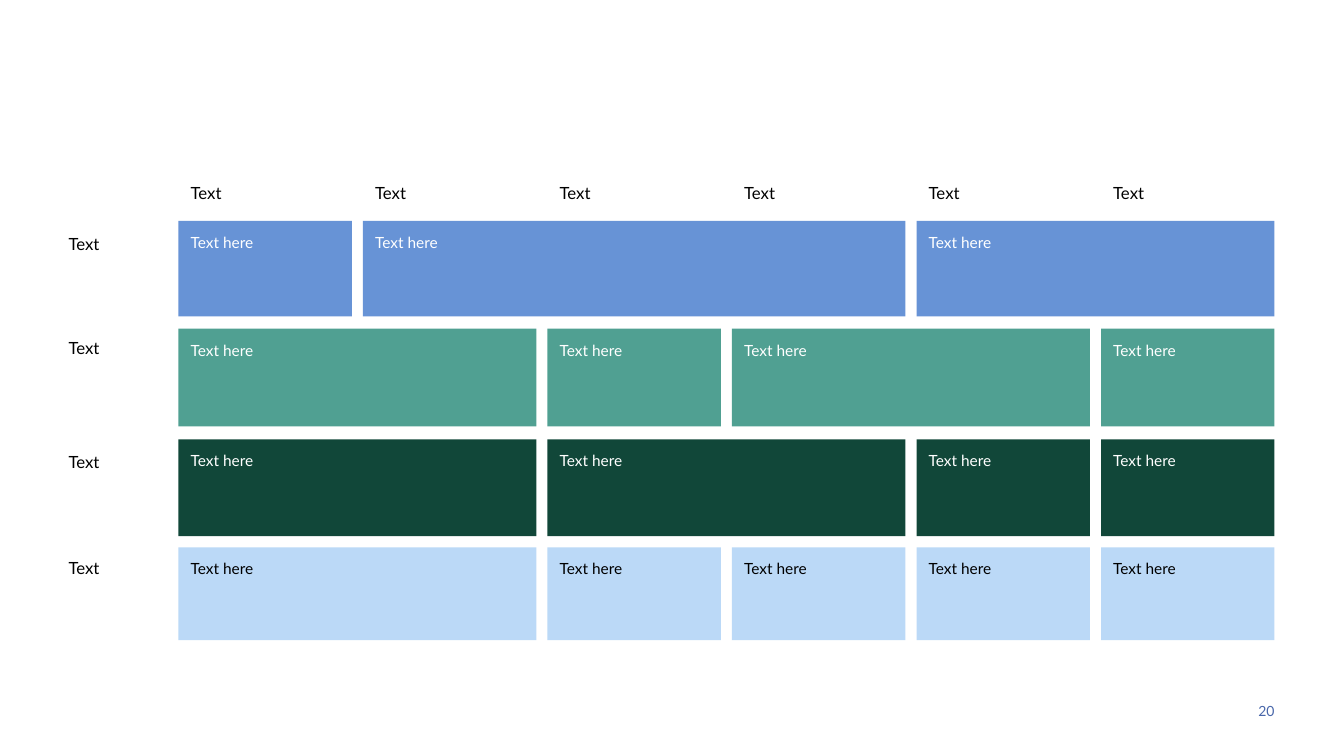
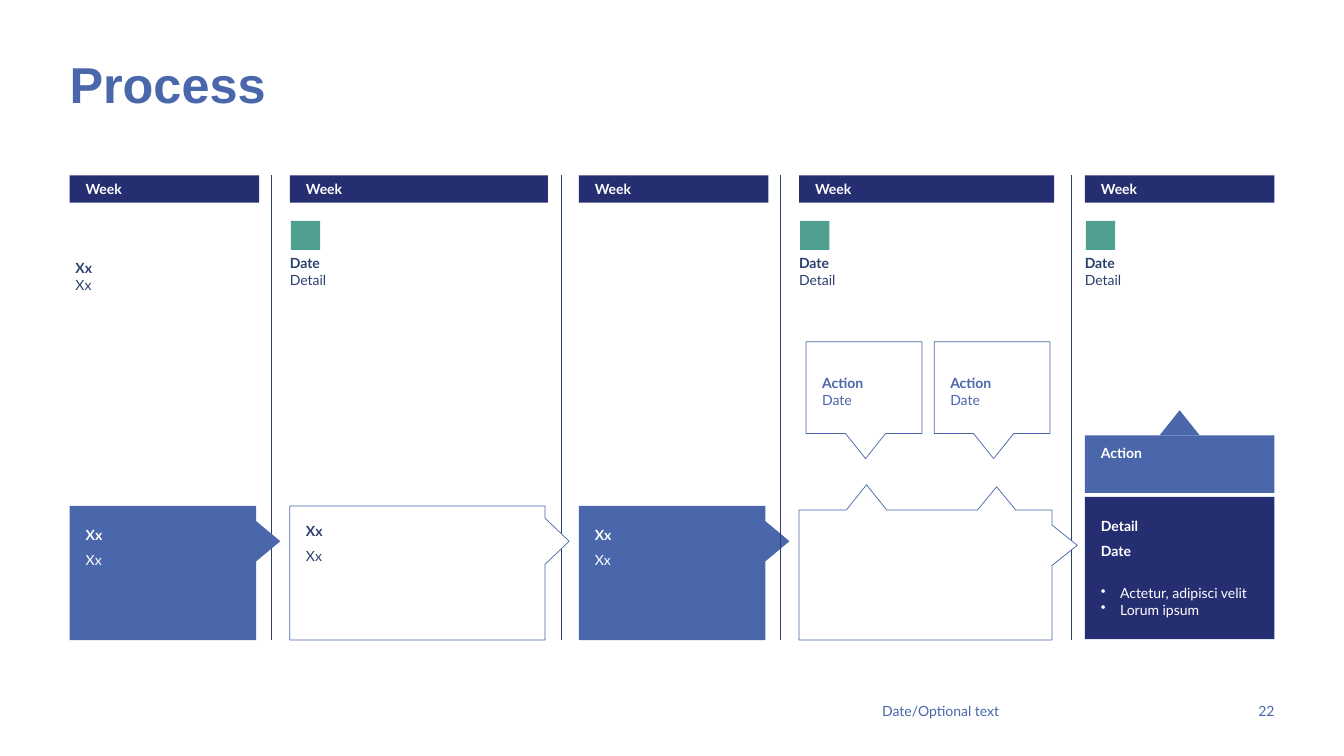
import dataclasses

import pptx
import pptx.dml.color
import pptx.enum.shapes
import pptx.enum.text
import pptx.oxml
import pptx.oxml.ns
import pptx.util

COLORS = {
    "white": "FFFFFF", "black": "000000", "blue": "4967AA", "navy": "242E70",
    "slate": "2B406D", "sky": "6793D6", "teal": "50A092", "forest": "114739",
    "ice": "BBD9F7",
}
SLIDE_WIDTH, SLIDE_HEIGHT = 13.33, 7.5
MODULE = SLIDE_HEIGHT / 75  # all lengths are columns and rows of this grid
SHAPES = pptx.enum.shapes.MSO_SHAPE
ALIGN = pptx.enum.text.PP_ALIGN
ANCHOR = pptx.enum.text.MSO_ANCHOR


def units(modules):
    return pptx.util.Inches(modules * MODULE)


def rgb(name):
    return pptx.dml.color.RGBColor.from_string(COLORS[name])


@dataclasses.dataclass
class Box:
    left: float
    top: float
    width: float
    height: float

    def inner(self, left, top, width, height):
        """Box placed by its offset from this box."""
        return Box(self.left + left, self.top + top, width, height)

    def emu(self):
        return [units(n) for n in (self.left, self.top, self.width, self.height)]


# Text and shapes
def write(shape, *paragraphs, inset=(0, 0, 0, 0), anchor=ANCHOR.TOP, **shared):
    """Each paragraph is a string or a pair of a string and its own format."""
    frame = shape.text_frame
    frame.word_wrap = True
    frame.vertical_anchor = anchor
    (frame.margin_left, frame.margin_top,
     frame.margin_right, frame.margin_bottom) = [units(n) for n in inset]
    for index, item in enumerate(paragraphs):
        text, own = (item, {}) if isinstance(item, str) else item
        style = {"size": 10, "color": "black", "font": "Lato", "bold": False,
                 "align": ALIGN.LEFT, "before": 0, "spacing": None,
                 "bullet": False, **shared, **own}
        paragraph = frame.add_paragraph() if index else frame.paragraphs[0]
        if style["bullet"]:
            add_bullet(paragraph)
        paragraph.alignment = style["align"]
        if index:
            paragraph.space_before = pptx.util.Pt(style["before"])
        if style["spacing"]:
            paragraph.line_spacing = style["spacing"]
        run = paragraph.add_run()
        run.text = text
        run.font.size = pptx.util.Pt(style["size"])
        run.font.name = style["font"]
        run.font.bold = style["bold"]
        run.font.color.rgb = rgb(style["color"])


def add_bullet(paragraph):
    properties = paragraph._p.get_or_add_pPr()
    properties.set("marL", str(units(1.9)))
    properties.set("indent", str(-units(1.9)))
    bullet = pptx.oxml.parse_xml(
        f'<a:buChar {pptx.oxml.ns.nsdecls("a")} char="•"/>')
    properties.append(bullet)


def add_label(slide, box, *paragraphs, **style):
    write(slide.shapes.add_textbox(*box.emu()), *paragraphs, **style)


def paint(shape, fill, line=None):
    shape.shadow.inherit = False
    shape.fill.solid()
    shape.fill.fore_color.rgb = rgb(fill)
    if line:
        shape.line.color.rgb = rgb(line)
        shape.line.width = pptx.util.Pt(0.5)
    else:
        shape.line.fill.background()
    return shape


def add_block(slide, box, fill, kind=SHAPES.RECTANGLE):
    return paint(slide.shapes.add_shape(kind, *box.emu()), fill)


def add_pointed_box(slide, box, fill, line=None, top=(), right=(), bottom=()):
    """Rectangle with points on its sides, each (centre, half width, depth)."""
    width, height = box.width, box.height
    corners = [(0, 0)]
    for centre, half, depth in top:
        corners += [(centre - half, 0), (centre, -depth), (centre + half, 0)]
    corners.append((width, 0))
    for centre, half, depth in right:
        corners += [(width, centre - half), (width + depth, centre),
                    (width, centre + half)]
    corners.append((width, height))
    for centre, half, depth in bottom:
        corners += [(centre + half, height), (centre, height + depth),
                    (centre - half, height)]
    corners.append((0, height))
    points = [(units(box.left + x), units(box.top + y)) for x, y in corners]
    builder = slide.shapes.build_freeform(*points[0], scale=1.0)
    builder.add_line_segments(points[1:], close=True)
    return paint(builder.convert_to_shape(), fill, line)


def add_rule(slide, x, top, bottom):
    rule = slide.shapes.add_connector(
        pptx.enum.shapes.MSO_CONNECTOR.STRAIGHT,
        units(x), units(top), units(x), units(bottom))
    rule.line.color.rgb = rgb("slate")
    rule.line.width = pptx.util.Pt(0.5)
    rule._element.spPr.append(pptx.oxml.parse_xml(
        f'<a:effectLst {pptx.oxml.ns.nsdecls("a")}/>'))


# Shared slide elements
def add_slide(presentation, number, title=None, footer=None):
    slide = presentation.slides.add_slide(presentation.slide_layouts[6])
    if title:
        add_label(slide, Box(6.9, 6.2, 119.6, 5.3), title, size=36,
                  font="Arial", bold=True, color="blue", spacing=0.85)
    small = {"color": "blue", "anchor": ANCHOR.BOTTOM,
             "spacing": pptx.util.Pt(12)}
    if footer:
        add_label(slide, Box(87.5, 68.1, 28.9, 3.3), footer, **small)
    add_label(slide, Box(117.7, 68.1, 8.7, 3.3), number,
              align=ALIGN.RIGHT, **small)
    return slide


# Slide with a matrix of spanning cells
def add_matrix(slide, box, columns, gap, rows):
    cell = (box.width - gap * (columns - 1)) / columns
    pitch = cell + gap
    for column in range(columns):
        add_label(slide, box.inner(column * pitch, -4.3, cell, 4.4), "Text",
                  size=12, inset=(1.2, 0.5, 1, 0.5))
    for top, height, label_offset, fill, color, spans in rows:
        add_label(slide, box.inner(-10.9, top + label_offset, 10, 3.6),
                  "Text", size=12)
        column = 0
        for span in spans:
            block = add_block(slide, box.inner(
                column * pitch, top, span * pitch - gap, height), fill)
            write(block, "Text here", size=11, color=color,
                  inset=(1.2, 1.2, 0.4, 2))
            column += span


def build_matrix_slide(presentation):
    slide = add_slide(presentation, "20")
    rows = [
        (0, 9.5, 1.3, "sky", "white", (1, 3, 2)),
        (10.7, 9.7, 0.9, "teal", "white", (2, 1, 2, 1)),
        (21.7, 9.6, 1.2, "forest", "white", (2, 2, 1, 1)),
        (32.4, 9.2, 1, "ice", "black", (2, 1, 1, 1, 1)),
    ]
    add_matrix(slide, Box(17.7, 21.9, 108.7, 41.6), 6, 1.1, rows)


# Regions of the process slide, each placed in its week column
def week_columns(area, widths):
    gap = (area.width - sum(widths)) / (len(widths) - 1)
    columns, left = [], 0
    for width in widths:
        columns.append(area.inner(left, 0, width, area.height))
        left += width + gap
    return columns, gap


def add_week_header(slide, column):
    header = add_block(slide, column.inner(0, 0, column.width, 2.7), "navy")
    write(header, "Week", color="white", bold=True, inset=(1.6, 0.5, 1, 0.5))


def add_date(slide, column):
    add_block(slide, column.inner(0.1, 4.5, 2.9, 2.9), "teal")
    add_label(slide, column.inner(0, 7.9, 16, 3.4), ("Date", {"bold": True}),
              "Detail", color="slate")


def add_stage(slide, column, fill, color, line=None, inset_top=2):
    arrow = add_pointed_box(
        slide, column.inner(0, 32.8, column.width - 0.3, 13.3), fill, line,
        right=[(3.5, 2.3 if line else 2, 2.4)])
    write(arrow, ("Xx", {"bold": True}), "Xx", color=color, before=6,
          inset=(1.6, inset_top, 1, 0.4))


def add_actions(slide, column):
    for index in range(2):
        callout = add_pointed_box(
            slide, column.inner(0.7 + index * 12.7, 16.5, 11.5, 9.1),
            "white", "blue", bottom=[(5.9, 2, 2.5)])
        write(callout, ("Action", {"bold": True}), "Date", color="blue",
              anchor=ANCHOR.MIDDLE, inset=(1.6, 0.5, 1, 2.2))
    add_pointed_box(
        slide, column.inner(0, 33.2, column.width - 0.2, 12.9), "white", "blue",
        top=[(6.7, 2, 2.5), (19.6, 1.9, 2.3)], right=[(3.5, 2, 2.5)])


def add_outcome(slide, column):
    action = add_block(slide, column.inner(0, 25.8, column.width, 5.7), "blue")
    write(action, "Action", color="white", bold=True, inset=(1.6, 0.9, 1, 1))
    add_block(slide, column.inner(column.width / 2 - 2, 23.3, 4, 2.5), "blue",
              SHAPES.ISOSCELES_TRIANGLE)
    detail = add_block(slide, column.inner(0, 31.9, column.width, 14.1), "navy")
    write(detail, ("Detail", {"bold": True}),
          ("Date", {"bold": True, "before": 6}),
          ("Actetur, adipisci velit", {"bullet": True, "before": 18}),
          ("Lorum ipsum", {"bullet": True}), color="white",
          inset=(1.6, 2, 1, 2))


def build_process_slide(presentation):
    slide = add_slide(presentation, "22", "Process", "Date/Optional text")
    area = Box(6.9, 17.4, 119.5, 46.1)
    columns, gap = week_columns(area, (18.8, 25.6, 18.8, 25.3, 18.8))
    first, second, third, fourth, fifth = columns
    for column in columns:
        add_week_header(slide, column)
    for column in (second, fourth, fifth):
        add_date(slide, column)
    add_label(slide, first.inner(-0.4, 7.9, 18.1, 4.4), ("Xx", {"bold": True}),
              "Xx", color="slate", inset=(1, 0.5, 1, 0.5))
    # The third stage lies under the rules, the others above them
    add_stage(slide, third, "blue", "white")
    for column, share in zip(columns, (0.4, 0.45, 0.4, 0.57)):
        add_rule(slide, column.left + column.width + share * gap,
                 area.top, area.top + area.height)
    add_stage(slide, first, "blue", "white")
    add_stage(slide, second, "white", "slate", "blue", 1.6)
    add_actions(slide, fourth)
    add_outcome(slide, fifth)


def main():
    presentation = pptx.Presentation()
    presentation.slide_width = pptx.util.Inches(SLIDE_WIDTH)
    presentation.slide_height = pptx.util.Inches(SLIDE_HEIGHT)
    build_matrix_slide(presentation)
    build_process_slide(presentation)
    presentation.save("out.pptx")


if __name__ == "__main__":
    main()
